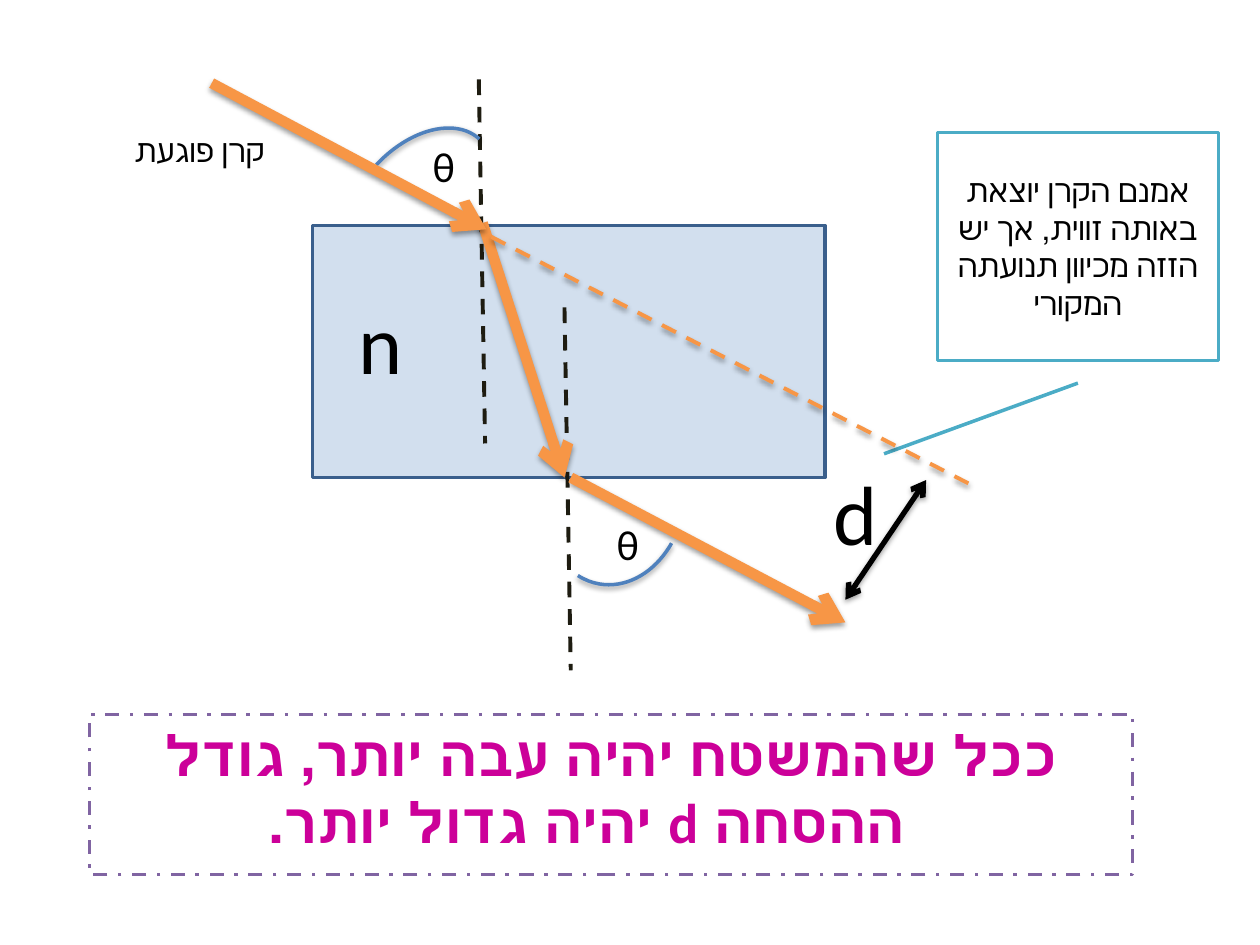
from lxml.etree import SubElement
from pptx import Presentation
from pptx.dml.color import RGBColor
from pptx.enum.dml import MSO_LINE_DASH_STYLE as DASH
from pptx.enum.shapes import MSO_CONNECTOR, MSO_SHAPE
from pptx.enum.text import MSO_ANCHOR, MSO_AUTO_SIZE, PP_ALIGN
from pptx.oxml.ns import qn
from pptx.util import Inches, Pt

ORANGE, BLUE, TEAL, PURPLE = "F79646", "4F81BD", "4BACC6", "8064A2"
BLACK, NORMAL, WHITE, MAGENTA = "000000", "1E1C11", "FFFFFF", "CC0099"


def rgb(value):
    return RGBColor.from_string(value)


def set_all(target, values):
    for name, value in values.items():
        setattr(target, name, value)


def add_xml(parent, tag, **attrs):
    return SubElement(parent, qn(tag), {k: str(v) for k, v in attrs.items()})


def style_line(s, color, width, dash=None):
    s.line.color.rgb = rgb(color)
    set_all(s.line, {"width": Pt(width), "dash_style": dash})


def add_effects(s, shadow):
    sp_pr = s._element.spPr
    for old in sp_pr.findall(qn("a:effectLst")):
        sp_pr.remove(old)
    effects = add_xml(sp_pr, "a:effectLst")
    if shadow:
        outer = add_xml(effects, "a:outerShdw", blurRad=40000, dist=20000,
                        dir=5400000, rotWithShape=0)
        add_xml(add_xml(outer, "a:srgbClr", val=BLACK), "a:alpha", val=38000)


def add_line(slide, start, end, color, width, dash=None, ends=(), shadow=True):
    points = [Inches(v) for v in (*start, *end)]
    s = slide.shapes.add_connector(MSO_CONNECTOR.STRAIGHT, *points)
    style_line(s, color, width, dash)
    for end_name in ends:
        add_xml(s.line._get_or_add_ln(), f"a:{end_name}End", type="arrow")
    add_effects(s, shadow)


def add_shape(slide, kind, box, line, fill=None, alpha=None, adj=(), rotation=0, shadow=False):
    s = slide.shapes.add_shape(kind, *map(Inches, box))
    s.rotation = rotation
    for i, value in enumerate(adj):
        s.adjustments[i] = value
    if fill:
        s.fill.solid()
        s.fill.fore_color.rgb = rgb(fill)
    else:
        s.fill.background()
    if alpha:
        color = s._element.spPr.find(f"{qn('a:solidFill')}/{qn('a:srgbClr')}")
        add_xml(color, "a:alpha", val=alpha * 1000)
    style_line(s, line, 2)
    add_effects(s, shadow)
    return s


def write(tf, text, size, align, color=BLACK, bold=False):
    tf.word_wrap = True
    p = tf.paragraphs[0]
    p.alignment = align
    p._p.get_or_add_pPr().set("rtl", "1")
    r = p.add_run()
    r.text = text
    set_all(r.font, {"size": Pt(size), "name": "Calibri", "bold": bold})
    r.font.color.rgb = rgb(color)
    return p


def add_label(slide, text, box, size):
    tf = slide.shapes.add_textbox(*map(Inches, box)).text_frame
    write(tf, text, size, PP_ALIGN.RIGHT)
    tf.auto_size = MSO_AUTO_SIZE.SHAPE_TO_FIT_TEXT


def add_callout(slide, text):
    s = add_shape(slide, MSO_SHAPE.LINE_CALLOUT_1, (7.44, 1.05, 2.23, 1.81), TEAL,
                  fill=WHITE, adj=(1.1, 0.5, 1.41, -0.19))
    s.text_frame.vertical_anchor = MSO_ANCHOR.MIDDLE
    write(s.text_frame, text, 18, PP_ALIGN.CENTER)


def fill_conclusion(slide, text):
    s = slide.placeholders[1]
    box = {"left": 0.71, "top": 5.67, "width": 8.28, "height": 1.27}
    set_all(s, {name: Inches(v) for name, v in box.items()})
    s.fill.solid()
    s.fill.fore_color.rgb = rgb(WHITE)
    style_line(s, PURPLE, 2, DASH.DASH_DOT)
    p = write(s.text_frame, text, 32, PP_ALIGN.CENTER, MAGENTA, True)
    p.space_before = Pt(6.4)
    p_pr = p._p.get_or_add_pPr()
    p_pr.set("marL", str(Inches(0.38)))
    p_pr.set("indent", str(Inches(-0.38)))
    add_xml(p_pr, "a:buNone")


def main():
    prs = Presentation()
    set_all(prs, {"slide_width": Inches(10), "slide_height": Inches(7.5)})
    slide = prs.slides.add_slide(prs.slide_layouts[1])
    title = slide.shapes.title._element
    title.getparent().remove(title)

    add_shape(slide, MSO_SHAPE.RECTANGLE, (2.48, 1.79, 4.07, 2), "3A5F8C", BLUE, 25)
    for start, end in (((3.8, 0.63), (3.85, 3.52)), ((4.48, 2.44), (4.53, 5.32))):
        add_line(slide, start, end, NORMAL, 2.25, DASH.DASH, shadow=False)

    add_shape(slide, MSO_SHAPE.ARC, (2.62, 1.16, 1.41, 0.92), BLUE,
              rotation=312.8, shadow=True)
    add_shape(slide, MSO_SHAPE.ARC, (4.17, 3.38, 1.41, 1.12), BLUE,
              adj=(179.78, 9.05), rotation=99.6, shadow=True)

    for text, box, size in (
        ("קרן פוגעת", (0.83, 0.99, 1.37, 0.42), 18),
        ("n", (2.6, 2.26, 0.69, 0.91), 48),
        ("θ", (3.15, 1.07, 0.56, 0.5), 24),
        ("θ", (4.61, 4.07, 0.56, 0.5), 24),
        ("d", (6.37, 3.61, 0.69, 0.91), 48),
    ):
        add_label(slide, text, box, size)

    add_callout(slide, "אמנם הקרן יוצאת באותה זווית, אך יש הזזה מכיוון תנועתה המקורי")

    for start, end in (
        ((4.53, 3.79), (6.71, 4.94)),
        ((3.83, 1.77), (4.48, 3.79)),
        ((1.68, 0.66), (3.86, 1.82)),
    ):
        add_line(slide, start, end, ORANGE, 6, ends=("tail",))
    add_line(slide, (3.9, 1.88), (7.75, 3.87), ORANGE, 2.25, DASH.DASH)
    add_line(slide, (6.71, 4.76), (7.35, 3.81), BLACK, 3, ends=("head", "tail"))

    fill_conclusion(slide, "ככל שהמשטח יהיה עבה יותר, גודל ההסחה d יהיה גדול יותר.")
    prs.save("out.pptx")


if __name__ == "__main__":
    main()
